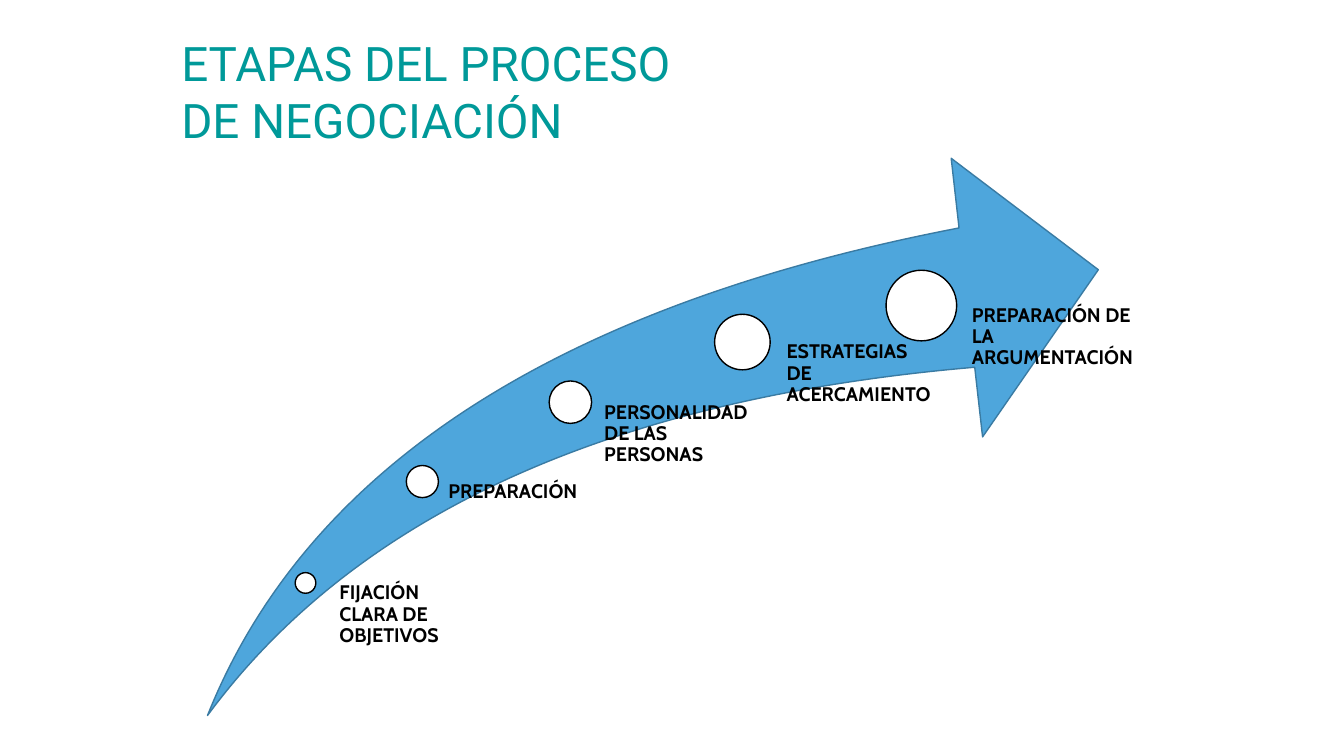
from dataclasses import dataclass

from pptx import Presentation
from pptx.dml.color import RGBColor
from pptx.enum.shapes import MSO_SHAPE
from pptx.enum.text import MSO_ANCHOR, MSO_AUTO_SIZE, PP_ALIGN
from pptx.shapes.autoshape import Shape
from pptx.slide import Slide
from pptx.text.text import TextFrame
from pptx.util import Cm, Pt

ARROW_BOTTOM = 18.03
INSET_PER_DIAMETER = 0.53


@dataclass(frozen=True)
class Stage:
    text: str
    left: float
    top: float
    diameter: float
    label_left: float
    label_width: float


STAGES = [
    Stage("FIJACIÓN CLARA DE OBJETIVOS", 7.44, 14.43, 0.52, 8.28, 2.95),
    Stage("PREPARACIÓN", 10.24, 11.73, 0.81, 10.87, 3.73),
    Stage("PERSONALIDAD DE LAS PERSONAS", 13.84, 9.6, 1.07, 14.66, 4.34),
    Stage("ESTRATEGIAS DE ACERCAMIENTO", 18.01, 7.92, 1.4, 19.08, 4.5),
    Stage("PREPARACIÓN DE LA ARGUMENTACIÓN", 22.33, 6.81, 1.78, 23.55, 5.51),
]


def color(value: str) -> RGBColor:
    return RGBColor.from_string(value)


def add_filled_shape(page: Slide, kind: MSO_SHAPE, left: float, top: float,
                     width: float, height: float, fill: str, line: str) -> Shape:
    shape = page.shapes.add_shape(kind, Cm(left), Cm(top), Cm(width), Cm(height))
    shape.shadow.inherit = False
    shape.fill.solid()
    shape.fill.fore_color.rgb = color(fill)
    shape.line.color.rgb = color(line)
    shape.line.width = Pt(1)
    return shape


def format_text(frame: TextFrame, font_name: str, size: float, hex_color: str,
                bold: bool = False) -> None:
    for para in frame.paragraphs:
        para.alignment = PP_ALIGN.LEFT
        for span in para.runs:
            span.font.name = font_name
            span.font.size = Pt(size)
            span.font.bold = bold
            span.font.color.rgb = color(hex_color)


def add_title(page: Slide) -> None:
    box = page.shapes.add_textbox(Cm(4.32), Cm(0.74), Cm(13.06), Cm(3.18))
    frame = box.text_frame
    frame.word_wrap = False
    frame.auto_size = MSO_AUTO_SIZE.SHAPE_TO_FIT_TEXT
    frame.text = "ETAPAS DEL PROCESO\nDE NEGOCIACIÓN"
    format_text(frame, "Roboto", 34, "009999")


def add_stage(page: Slide, stage: Stage) -> None:
    add_filled_shape(page, MSO_SHAPE.OVAL, stage.left, stage.top,
                     stage.diameter, stage.diameter, "FFFFFF", "000000")
    label_top = stage.top + stage.diameter / 2
    box = page.shapes.add_textbox(Cm(stage.label_left), Cm(label_top),
                                  Cm(stage.label_width), Cm(ARROW_BOTTOM - label_top))
    frame = box.text_frame
    frame.word_wrap = True
    frame.vertical_anchor = MSO_ANCHOR.TOP
    frame.margin_left = Cm(INSET_PER_DIAMETER * stage.diameter)
    frame.margin_top = frame.margin_right = frame.margin_bottom = 0
    frame.text = stage.text
    frame.paragraphs[0].line_spacing = 0.9
    format_text(frame, "Cabin", 14, "000000", bold=True)


def main() -> None:
    deck = Presentation()
    deck.slide_width, deck.slide_height = Cm(33.87), Cm(19.05)
    page = deck.slides.add_slide(deck.slide_layouts[6])
    arrow = add_filled_shape(page, MSO_SHAPE.SWOOSH_ARROW, 5.23, 3.99,
                             22.45, ARROW_BOTTOM - 3.99, "4EA6DC", "3A7BA3")
    arrow.adjustments[0] = 0.25
    arrow.adjustments[1] = 0.25
    for stage in STAGES:
        add_stage(page, stage)
    add_title(page)
    deck.save("out.pptx")


if __name__ == "__main__":
    main()
